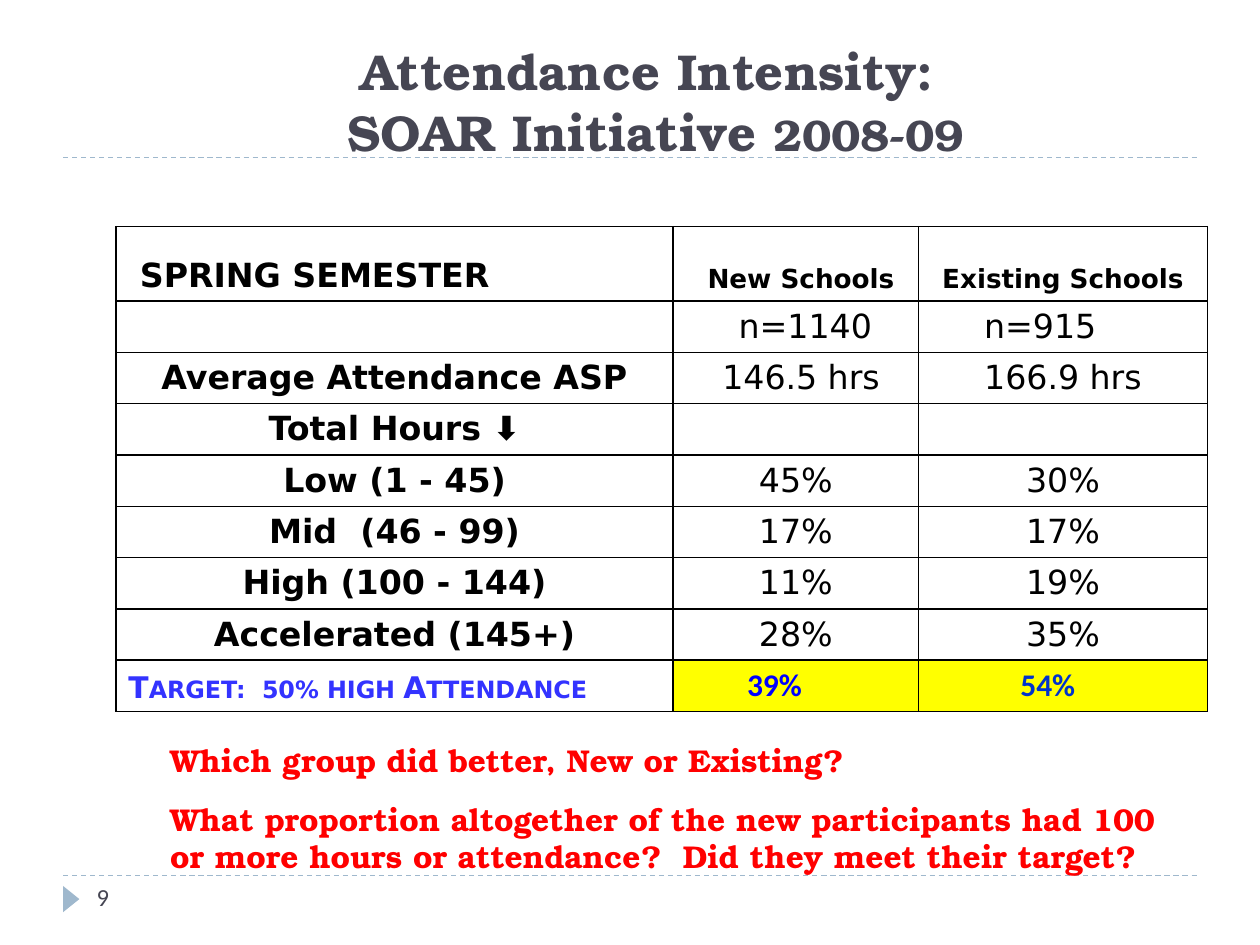
from dataclasses import dataclass

import pptx
import pptx.dml.color
import pptx.enum.dml
import pptx.enum.shapes
import pptx.enum.text
import pptx.oxml
import pptx.oxml.ns
import pptx.util
from pptx.util import Cm, Pt

ALIGN = pptx.enum.text.PP_ALIGN
ANCHOR = pptx.enum.text.MSO_ANCHOR


@dataclass(frozen=True)
class Theme:
    serif: str = "TeX Gyre Bonum"
    table_face: str = "DejaVu Sans"
    plain: str = "Calibri"
    slate: str = "464653"
    accent: str = "9FB8CD"
    black: str = "000000"
    red: str = "FF0000"
    target: str = "3333FF"
    new_result: str = "0000FF"
    existing_result: str = "0033CC"
    highlight: str = "FFFF00"
    title_size: float = 28.8
    year_size: float = 25.2
    cell_size: float = 19
    header_size: float = 15
    target_size: float = 17
    body_size: float = 18
    number_size: float = 14


THEME = Theme()
ROWS = [
    ("SPRING SEMESTER", "New Schools", "Existing Schools"),
    ("", "n=1140", "n=915"),
    ("Average Attendance ASP", "146.5 hrs", "166.9 hrs"),
    ("Total Hours ⬇", "", ""),
    ("Low (1 - 45)", "45%", "30%"),
    ("Mid  (46 - 99)", "17%", "17%"),
    ("High (100 - 144)", "11%", "19%"),
    ("Accelerated (145+)", "28%", "35%"),
    ("Target:  50% high Attendance", "", ""),
]
COLUMN_WIDTHS = (11.23, 4.95, 5.82)
HEADER_HEIGHT, ROW_HEIGHT = 1.5, 1.03
HEADER, COUNTS, AVERAGE, TARGET = 0, 1, 2, len(ROWS) - 1


def rgb(color):
    return pptx.dml.color.RGBColor.from_string(color)


def set_font(font, face, size, color, bold=False):
    font.name = face
    font.size = Pt(size)
    font.color.rgb = rgb(color)
    font.bold = bold


def add_title(slide):
    title = slide.shapes.title
    title.left, title.top, title.width, title.height = Cm(2.74), Cm(0.84), Cm(20.96), Cm(2.54)
    frame = title.text_frame
    frame.auto_size = pptx.enum.text.MSO_AUTO_SIZE.NONE
    frame.vertical_anchor = ANCHOR.BOTTOM
    heading = frame.paragraphs[0]
    heading.alignment = ALIGN.CENTER
    set_font(heading.font, THEME.serif, THEME.title_size, THEME.slate, True)
    heading.add_run().text = "Attendance Intensity: "
    heading.add_line_break()
    heading.add_run().text = "SOAR Initiative "
    year = heading.add_run()
    year.text = "2008-09"
    year.font.size = Pt(THEME.year_size)


def add_rule(slide, top):
    rule = slide.shapes.add_connector(
        pptx.enum.shapes.MSO_CONNECTOR.STRAIGHT, Cm(1.27), Cm(top), Cm(24.13), Cm(top))
    rule.line.color.rgb = rgb(THEME.accent)
    rule.line.width = Pt(0.75)
    rule.line.dash_style = pptx.enum.dml.MSO_LINE.DASH
    properties = rule._element.spPr
    properties.append(properties.makeelement(pptx.oxml.ns.qn("a:effectLst")))


def add_page_marker(slide):
    marker = slide.shapes.add_shape(
        pptx.enum.shapes.MSO_SHAPE.ISOSCELES_TRIANGLE, Cm(1.17), Cm(17.96), Cm(0.53), Cm(0.33))
    marker.rotation = 90
    marker.shadow.inherit = False
    marker.fill.solid()
    marker.fill.fore_color.rgb = rgb(THEME.accent)
    marker.line.fill.background()


def add_text(slide, box, lines, face, size, color, bold=True):
    frame = slide.shapes.add_textbox(*map(Cm, box)).text_frame
    frame.word_wrap = True
    for index, line in enumerate(lines):
        paragraph = frame.add_paragraph() if index else frame.paragraphs[0]
        paragraph.text = line
        paragraph.space_before = Pt(12 if index else 0)
        set_font(paragraph.font, face, size, color, bold)


def set_borders(cell):
    properties = cell._tc.get_or_add_tcPr()
    for index, side in enumerate(("lnL", "lnR", "lnT", "lnB")):
        properties.insert(index, pptx.oxml.parse_xml(
            f'<a:{side} {pptx.oxml.ns.nsdecls("a")} w="12700"><a:solidFill>'
            f'<a:srgbClr val="{THEME.black}"/></a:solidFill></a:{side}>'))


def left_margin(row, column):
    """Return the cell's left inset in cm, which shifts some entries to the right."""
    if (row, column) == (HEADER, 0):
        return 0.48
    if row == COUNTS:
        return 1.32
    if column == 1 and row in (HEADER, AVERAGE):
        return 0.46
    return 0.25


def format_cell(cell, row, column):
    is_label = column == 0
    if row == TARGET and not is_label:
        cell.fill.solid()
        cell.fill.fore_color.rgb = rgb(THEME.highlight)
    else:
        cell.fill.background()
    set_borders(cell)
    cell.vertical_anchor = ANCHOR.BOTTOM
    cell.margin_left = Cm(left_margin(row, column))

    entry = cell.text_frame.paragraphs[0]
    starts_left = row == COUNTS or (is_label and row in (HEADER, TARGET))
    entry.alignment = ALIGN.LEFT if starts_left else ALIGN.CENTER
    size, color = THEME.cell_size, THEME.black
    if row == HEADER and not is_label:
        size = THEME.header_size
    elif row == TARGET:
        size, color = THEME.target_size, THEME.target
    set_font(entry.font, THEME.table_face, size, color, is_label or row == HEADER)
    if row == TARGET:
        for run in entry.runs:
            run._r.get_or_add_rPr().set("cap", "small")


def add_attendance_table(slide):
    height = HEADER_HEIGHT + ROW_HEIGHT * (len(ROWS) - 1)
    table = slide.shapes.add_table(
        len(ROWS), len(COLUMN_WIDTHS), Cm(2.34), Cm(4.57),
        Cm(sum(COLUMN_WIDTHS)), Cm(height)).table
    table.first_row = table.horz_banding = False
    for column, width in zip(table.columns, COLUMN_WIDTHS):
        column.width = Cm(width)
    for row, entries in enumerate(ROWS):
        table.rows[row].height = Cm(HEADER_HEIGHT if row == HEADER else ROW_HEIGHT)
        for column, entry in enumerate(entries):
            cell = table.cell(row, column)
            cell.text = entry
            format_cell(cell, row, column)


def main():
    presentation = pptx.Presentation()
    presentation.slide_width, presentation.slide_height = Cm(25.4), Cm(19.05)
    title_only = presentation.slide_layouts.get_by_name("Title Only")
    slide = presentation.slides.add_slide(title_only)

    for top in (17.65, 3.18):
        add_rule(slide, top)
    add_page_marker(slide)
    add_title(slide)
    add_attendance_table(slide)
    questions = (
        "Which group did better, New or Existing?",
        "What proportion altogether of the new participants had 100 or more hours "
        "or attendance?  Did they meet their target?",
    )
    add_text(slide, (3.18, 14.81, 20.75, 3), questions,
             THEME.serif, THEME.body_size, THEME.red)
    add_text(slide, (14.81, 13.28, 2.74, 1.02), ["39%"],
             THEME.plain, THEME.body_size, THEME.new_result)
    add_text(slide, (20.32, 13.28, 2.54, 1.02), ["54%"],
             THEME.plain, THEME.body_size, THEME.existing_result)
    add_text(slide, (1.7, 17.65, 5.51, 1.02), ["9"],
             THEME.plain, THEME.number_size, THEME.slate, bold=False)
    presentation.save("out.pptx")


if __name__ == "__main__":
    main()
